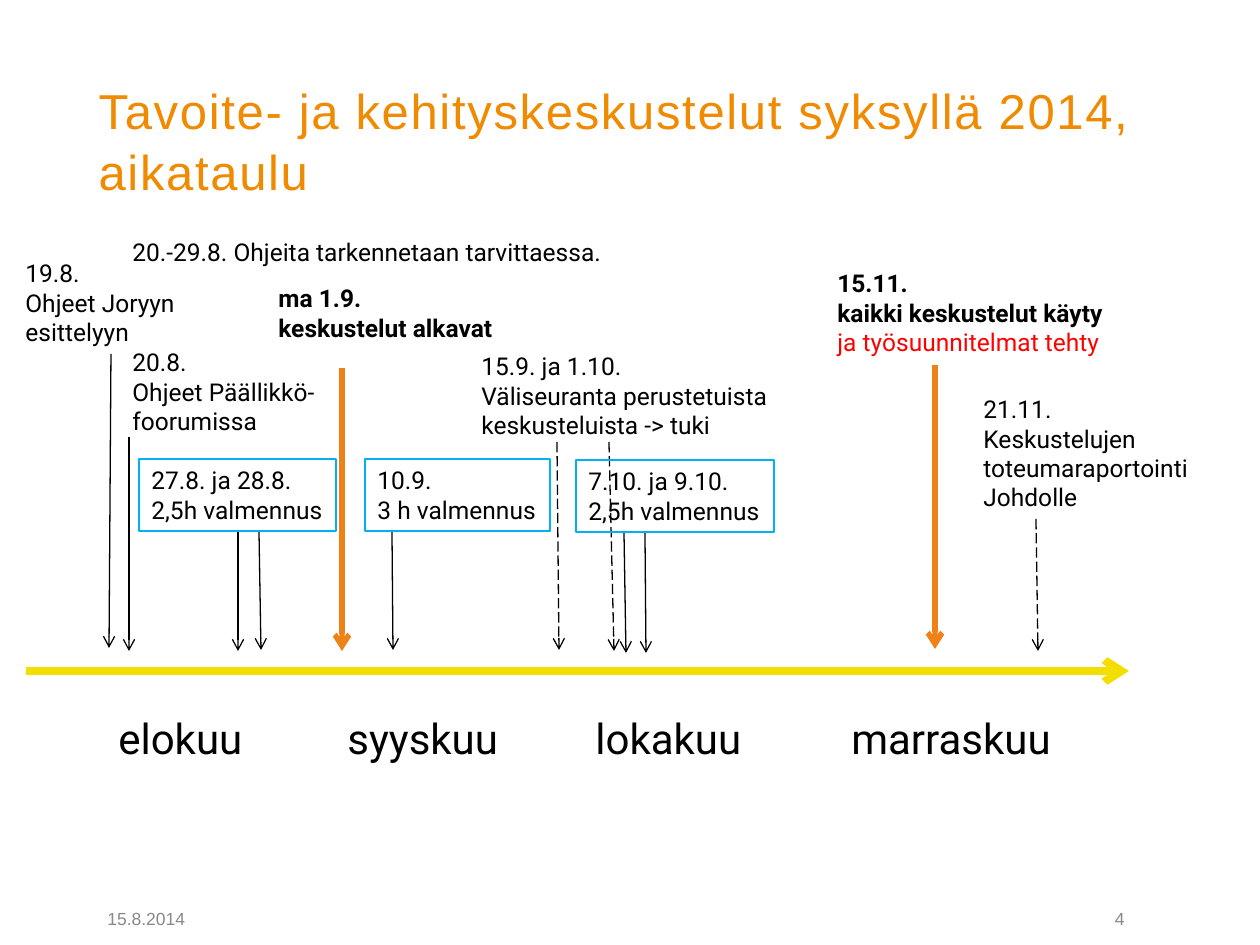
from dataclasses import dataclass

from lxml import etree
from pptx import Presentation
from pptx import util as u
from pptx.dml.color import RGBColor
from pptx.enum import dml, shapes, text
from pptx.oxml.ns import qn

EMU_PER_PX = 914400 / 126


@dataclass(frozen=True)
class Theme:
    heading_font: str = "Arial"
    body_font: str = "Roboto"
    title: str = "F08A00"
    ink: str = "000000"
    alert: str = "FF0000"
    muted: str = "878989"
    axis: str = "F4DE00"
    milestone: str = "EE8216"
    frame: str = "00B0F0"
    title_size: int = 28
    month_size: int = 24
    note_size: int = 14
    footer_size: int = 10


THEME = Theme()


@dataclass(frozen=True)
class Line:
    words: str
    color: str = THEME.ink
    bold: bool = False


@dataclass(frozen=True)
class Label:
    left: int
    top: int
    width: int
    height: int
    lines: tuple[Line, ...]
    size: int = THEME.note_size
    font: str = THEME.body_font
    wrap: bool = True
    framed: bool = False
    align: text.PP_ALIGN = text.PP_ALIGN.LEFT


@dataclass(frozen=True)
class Arrow:
    start: tuple[int, int]
    end: tuple[int, int]
    color: str = THEME.ink
    weight: float = 0.75
    dashed: bool = False


def px(count: int) -> u.Emu:
    return u.Emu(round(count * EMU_PER_PX))


def add_span(para, words: str, font: str, size: int, color: str, bold: bool = False):
    span = para.add_run()
    span.text = words
    span.font.name = font
    span.font.size = u.Pt(size)
    span.font.bold = bold
    span.font.color.rgb = RGBColor.from_string(color)
    return span


def draw_label(page, label: Label) -> None:
    place = [px(n) for n in (label.left, label.top, label.width, label.height)]
    if label.framed:
        box = page.shapes.add_shape(shapes.MSO_SHAPE.RECTANGLE, *place)
        box.shadow.inherit = False
        box.fill.background()
        box.line.color.rgb = RGBColor.from_string(THEME.frame)
        box.line.width = u.Pt(0.75)
    else:
        box = page.shapes.add_textbox(*place)
    frame = box.text_frame
    frame.word_wrap = label.wrap
    frame.auto_size = text.MSO_AUTO_SIZE.SHAPE_TO_FIT_TEXT
    frame.vertical_anchor = text.MSO_ANCHOR.TOP
    for index, line in enumerate(label.lines):
        para = frame.add_paragraph() if index else frame.paragraphs[0]
        para.alignment = label.align
        add_span(para, line.words, label.font, label.size, line.color, line.bold)


def draw_arrow(page, arrow: Arrow) -> None:
    ends = [px(n) for n in arrow.start + arrow.end]
    link = page.shapes.add_connector(shapes.MSO_CONNECTOR.STRAIGHT, *ends)
    link.line.color.rgb = RGBColor.from_string(arrow.color)
    link.line.width = u.Pt(arrow.weight)
    if arrow.dashed:
        link.line.dash_style = dml.MSO_LINE.LONG_DASH
    properties = link.element.spPr
    etree.SubElement(properties.find(qn("a:ln")), qn("a:tailEnd"), type="arrow")
    etree.SubElement(properties, qn("a:effectLst"))


def draw_title(page, lines: tuple[str, ...]) -> None:
    title = page.shapes.title
    title.left, title.top, title.width, title.height = map(px, (86, 71, 1070, 102))
    frame = title.text_frame
    frame.word_wrap = True
    frame.auto_size = text.MSO_AUTO_SIZE.NONE
    frame.vertical_anchor = text.MSO_ANCHOR.TOP
    para = frame.paragraphs[0]
    para.alignment = text.PP_ALIGN.LEFT
    para.line_spacing = 1.05
    for index, words in enumerate(lines):
        if index:
            para.add_line_break()
        span = add_span(para, words, THEME.heading_font, THEME.title_size, THEME.title)
        span.font._element.set("spc", "100")


def month(name: str, left: int, width: int, wrap: bool = True) -> Label:
    return Label(left, 706, width, 63, (Line(name),), THEME.month_size, wrap=wrap)


def footer(words: str, left: int, width: int, align: text.PP_ALIGN) -> Label:
    return Label(left, 902, width, 43, (Line(words, THEME.muted),),
                 THEME.footer_size, THEME.heading_font, align=align)


ARROWS = (
    # Time axis
    Arrow((26, 671), (1129, 671), THEME.axis, 4.5),
    # Instructions
    Arrow((111, 354), (109, 648)),
    Arrow((129, 437), (129, 651)),
    # Training days
    Arrow((238, 532), (238, 651)),
    Arrow((259, 532), (261, 650)),
    Arrow((392, 532), (393, 650)),
    Arrow((624, 533), (626, 653)),
    Arrow((645, 533), (646, 653)),
    # Start and end of the discussions
    Arrow((342, 368), (342, 651), THEME.milestone, 3),
    Arrow((935, 365), (935, 649), THEME.milestone, 3),
    # Follow-up and reporting
    Arrow((557, 442), (559, 650), dashed=True),
    Arrow((609, 442), (614, 651), dashed=True),
    Arrow((1036, 519), (1038, 651), dashed=True),
)

LABELS = (
    # Months
    month("elokuu", 106, 149, wrap=False),
    month("syyskuu", 335, 195),
    month("lokakuu", 583, 195),
    month("marraskuu", 839, 249),
    # Events
    Label(13, 252, 183, 102, (Line("19.8."), Line("Ohjeet Joryyn esittelyyn"))),
    Label(120, 231, 500, 43, (Line("20.-29.8. Ohjeita tarkennetaan tarvittaessa."),),
          wrap=False),
    Label(120, 341, 210, 102,
          (Line("20.8."), Line("Ohjeet Päällikkö-"), Line("foorumissa")), wrap=False),
    Label(266, 277, 270, 72,
          (Line("ma 1.9.", bold=True), Line("keskustelut alkavat", bold=True)),
          wrap=False),
    Label(469, 345, 350, 102,
          (Line("15.9. ja 1.10."),
           Line("Väliseuranta perustetuista keskusteluista -> tuki"))),
    Label(825, 262, 328, 131,
          (Line("15.11.", bold=True), Line("kaikki keskustelut käyty", bold=True),
           Line("ja työsuunnitelmat tehty", THEME.alert)), wrap=False),
    Label(971, 388, 233, 131,
          (Line("21.11."), Line("Keskustelujen toteumaraportointi Johdolle"))),
    # Training sessions
    Label(139, 459, 197, 72, (Line("27.8. ja 28.8."), Line("2,5h valmennus")),
          framed=True),
    Label(365, 459, 185, 72, (Line("10.9."), Line("3 h valmennus")),
          wrap=False, framed=True),
    Label(576, 460, 198, 72, (Line("7.10. ja 9.10."), Line("2,5h valmennus")),
          wrap=False, framed=True),
    # Footer
    footer("15.8.2014", 95, 210, text.PP_ALIGN.LEFT),
    footer("4", 935, 202, text.PP_ALIGN.RIGHT),
)


def main() -> None:
    deck = Presentation()
    deck.slide_width, deck.slide_height = px(1260), px(945)
    page = deck.slides.add_slide(deck.slide_layouts[5])
    draw_title(page, ("Tavoite- ja kehityskeskustelut syksyllä 2014,", "aikataulu"))
    for arrow in ARROWS:
        draw_arrow(page, arrow)
    for label in LABELS:
        draw_label(page, label)
    deck.save("out.pptx")


if __name__ == "__main__":
    main()
